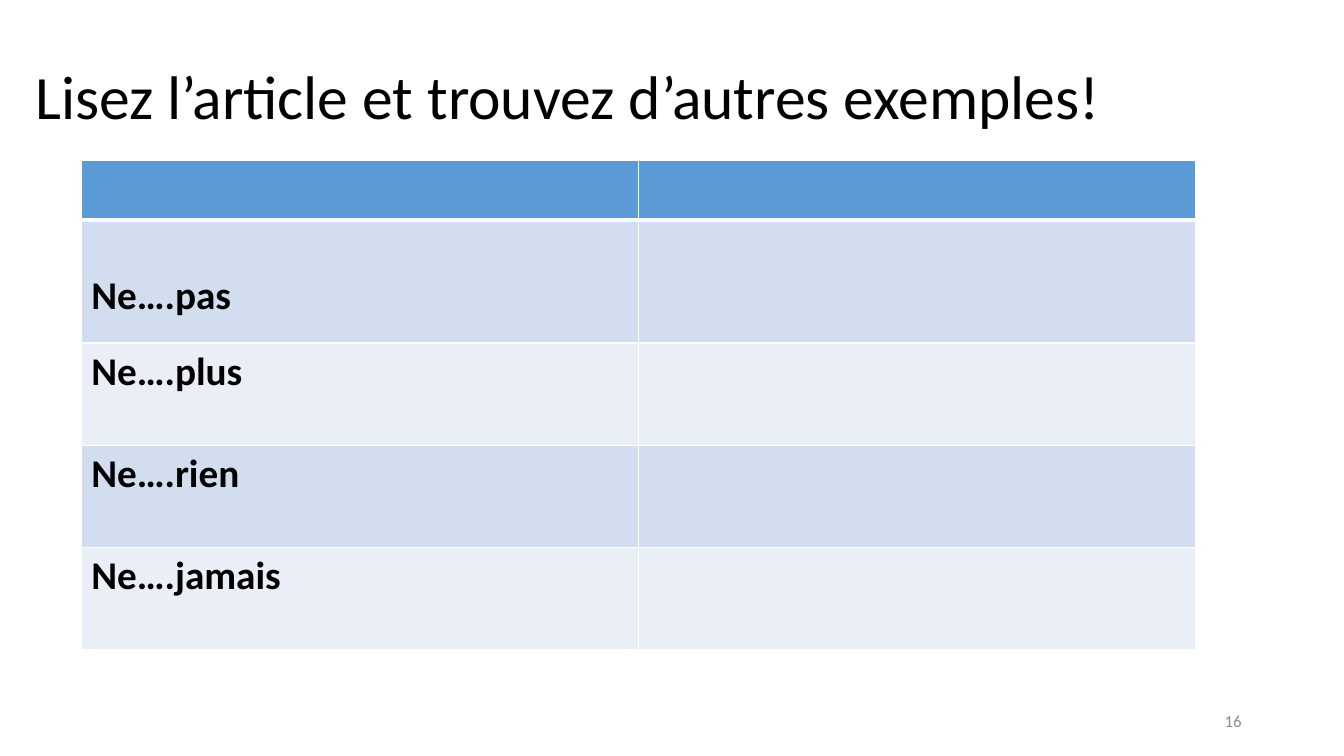
from pptx import Presentation
from pptx.dml.color import RGBColor
from pptx.enum import text
from pptx.oxml import ns
from pptx.util import Pt
from lxml import etree

COLORS = {
    "ink": "000000",
    "number": "8C8C8C",
    "border": "FFFFFF",
    "header": "5B9BD5",
    "band_dark": "D2DEEF",
    "band_light": "EAEFF7",
}
FONT = "Calibri"
NEGATIONS = ["Ne….pas", "Ne….plus", "Ne….rien", "Ne….jamais"]
ROW_HEIGHTS = [42.5, 88, 73, 73, 73]
COLUMN_WIDTH = 398.2
LINE_ABOVE_FIRST = 34.2


def add_span(para, content, size, color, bold=False):
    span = para.add_run()
    span.text = content
    span.font.name = FONT
    span.font.size = Pt(size)
    span.font.bold = bold
    span.font.color.rgb = RGBColor.from_string(COLORS[color])


def set_title(page, content):
    title = page.shapes.title
    title.left, title.top, title.width, title.height = Pt(18), Pt(20), Pt(875.5), Pt(101.5)
    frame = title.text_frame
    frame.auto_size = text.MSO_AUTO_SIZE.NONE
    frame.vertical_anchor = text.MSO_ANCHOR.MIDDLE
    para = frame.paragraphs[0]
    para.alignment = text.PP_ALIGN.LEFT
    para.line_spacing = 0.9
    add_span(para, content, 44, "ink")


def set_borders(cell, top, bottom):
    """Draw the four edges of a cell; top and bottom are widths in points."""
    properties = cell._tc.get_or_add_tcPr()
    for edge, width in (("lnL", 1), ("lnR", 1), ("lnT", top), ("lnB", bottom)):
        line = etree.SubElement(properties, ns.qn(f"a:{edge}"), w=str(Pt(width)))
        fill = etree.SubElement(line, ns.qn("a:solidFill"))
        etree.SubElement(fill, ns.qn("a:srgbClr"), val=COLORS["border"])


def fill_cell(cell, color):
    cell.fill.solid()
    cell.fill.fore_color.rgb = RGBColor.from_string(COLORS[color])


def add_negation_table(page):
    frame = page.shapes.add_table(
        len(ROW_HEIGHTS), 2, Pt(58), Pt(114.5), Pt(2 * COLUMN_WIDTH), Pt(sum(ROW_HEIGHTS))
    )
    table = frame.table
    for column in table.columns:
        column.width = Pt(COLUMN_WIDTH)
    for index, height in enumerate(ROW_HEIGHTS):
        row = table.rows[index]
        row.height = Pt(height)
        band = "header" if index == 0 else "band_dark" if index % 2 else "band_light"
        for cell in row.cells:
            set_borders(cell, top=3 if index == 1 else 1, bottom=3 if index == 0 else 1)
            fill_cell(cell, band)
    for index, negation in enumerate(NEGATIONS, start=1):
        add_span(table.cell(index, 0).text_frame.paragraphs[0], negation, 28, "ink", bold=True)
    table.cell(1, 0).margin_top = Pt(3.6 + LINE_ABOVE_FIRST)


def add_page_number(page, number):
    box = page.shapes.add_textbox(Pt(678), Pt(500.5), Pt(216), Pt(28.75))
    frame = box.text_frame
    frame.word_wrap = True
    frame.vertical_anchor = text.MSO_ANCHOR.MIDDLE
    para = frame.paragraphs[0]
    para.alignment = text.PP_ALIGN.RIGHT
    add_span(para, number, 12, "number")


def main():
    deck = Presentation()
    deck.slide_width, deck.slide_height = Pt(960), Pt(540)
    page = deck.slides.add_slide(deck.slide_layouts.get_by_name("Title Only"))
    set_title(page, "Lisez l’article et trouvez d’autres exemples!")
    add_negation_table(page)
    add_page_number(page, "16")
    deck.save("out.pptx")


if __name__ == "__main__":
    main()
